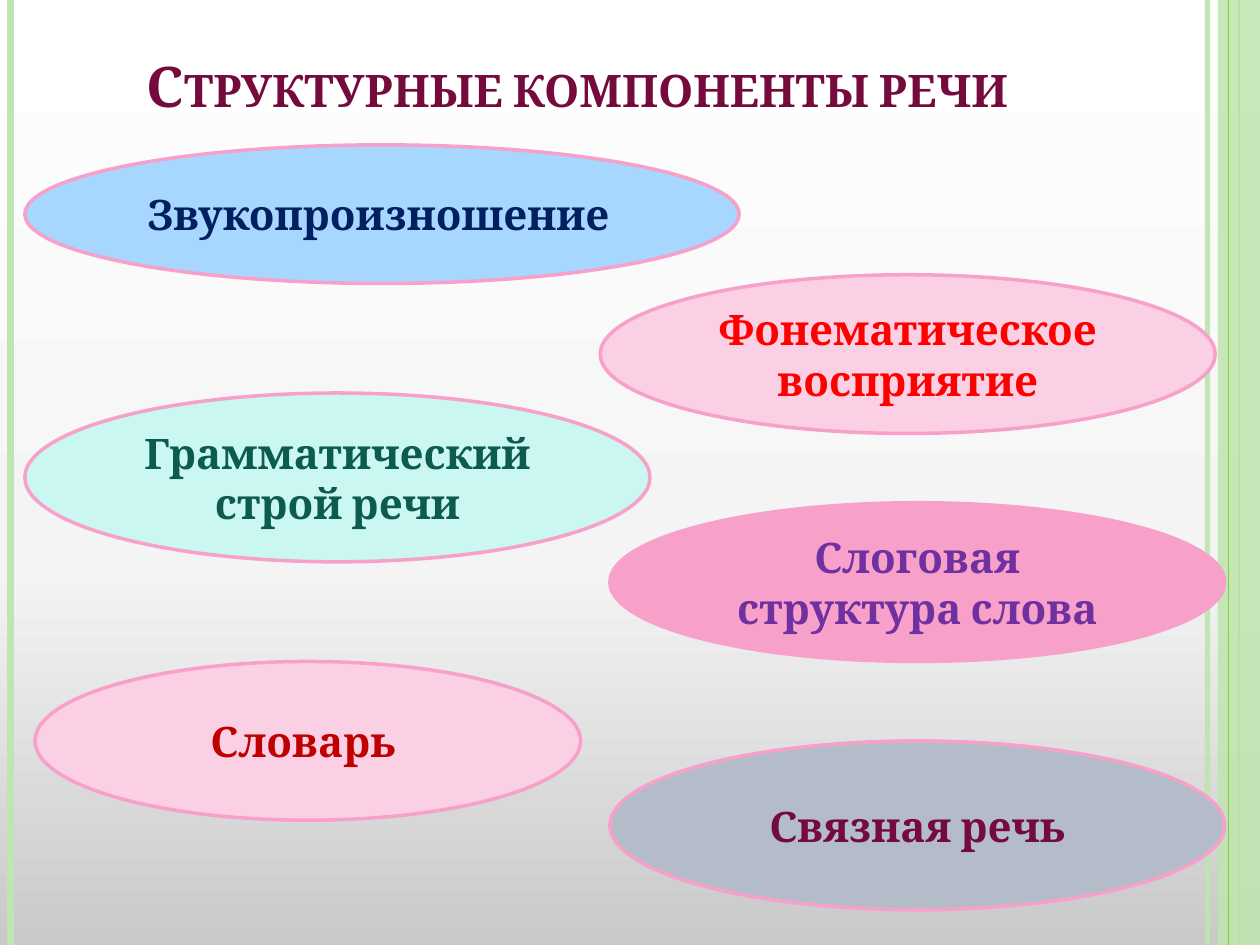
from copy import deepcopy
from dataclasses import dataclass

from lxml import etree
from pptx import Presentation
from pptx.dml.color import RGBColor
from pptx.enum import shapes, text
from pptx.oxml import ns
from pptx.util import Pt

WIDTH, HEIGHT = 720, 540
FONT = "Cambria"
COLOURS = {
    "grey": "C9C9C9", "silver": "F4F4F4", "white": "FFFFFF",
    "pale green": "C0E5AF", "green": "7FD13B",
    "plum": "750B3D", "pink": "F7A1CA", "pale pink": "FBD0E4",
    "sky": "A7D6FF", "navy": "002060", "mint": "CAF7F1", "teal": "0D5A4F",
    "dark red": "C00000", "red": "FF0000", "purple": "7030A0", "slate": "B4BCCA",
}


@dataclass
class Stripe:
    x: float
    weight: float
    colour: str
    opacity: int = 100


@dataclass
class Component:
    spans: list[tuple[str, float]]
    left: float
    top: float
    width: float
    height: float
    fill: str
    ink: str


# Stripes behind and in front of the right-hand band
BACK_STRIPES = [
    Stripe(690, 3, "pale green", 93),
    Stripe(6, 4.5, "pale green"),
    Stripe(708, 1.5, "green"),
]
FRONT_STRIPE = Stripe(702, 0.75, "green")

COMPONENTS = [
    Component([("Звукопроизношение", 24), (" ", 18)], 14.2, 82.8, 408.2, 79.2, "sky", "navy"),
    Component([("Грамматический строй речи", 24)], 14.2, 224.6, 357.2, 96.5, "mint", "teal"),
    Component([("Словарь ", 24)], 20, 378, 311.8, 90.7, "pale pink", "dark red"),
    Component([("Фонематическое восприятие", 24)], 343, 157, 351.4, 90.7, "pale pink", "red"),
    Component([("Слоговая структура слова", 24)], 348.5, 287.3, 351.4, 90.7, "pink", "purple"),
    Component([("Связная речь", 24)], 348.5, 423.4, 351.4, 96.5, "slate", "plum"),
]


def rgb(name: str) -> RGBColor:
    return RGBColor.from_string(COLOURS[name])


def set_opacity(shape, percent: int) -> None:
    colour = shape._element.spPr.find(".//" + ns.qn("a:srgbClr"))
    etree.SubElement(colour, ns.qn("a:alpha")).set("val", str(percent * 1000))


def paint_background(page) -> None:
    fill = page.background.fill
    fill.gradient()
    fill.gradient_angle = 90
    stop_list = page._element.find(".//" + ns.qn("a:gsLst"))
    stop_list.append(deepcopy(stop_list[-1]))
    stops = [("grey", 0), ("silver", 0.4), ("white", 1)]
    for stop, (colour, position) in zip(fill.gradient_stops, stops):
        stop.color.rgb = rgb(colour)
        stop.position = position


def add_stripe(page, stripe: Stripe) -> None:
    line = page.shapes.add_connector(
        shapes.MSO_CONNECTOR.STRAIGHT, Pt(stripe.x), Pt(0), Pt(stripe.x), Pt(HEIGHT))
    line.line.color.rgb = rgb(stripe.colour)
    line.line.width = Pt(stripe.weight)
    if stripe.opacity < 100:
        set_opacity(line, stripe.opacity)
    etree.SubElement(line._element.spPr, ns.qn("a:effectLst"))


def add_band(page) -> None:
    band = page.shapes.add_shape(
        shapes.MSO_SHAPE.RECTANGLE, Pt(696), Pt(0), Pt(24), Pt(HEIGHT))
    band.shadow.inherit = False
    band.fill.solid()
    band.fill.fore_color.rgb = rgb("pale green")
    set_opacity(band, 87)
    band.line.fill.background()


def add_span(para, words: str, size: float, ink: str):
    span = para.add_run()
    span.text = words
    span.font.name = FONT
    span.font.size = Pt(size)
    span.font.bold = True
    span.font.color.rgb = rgb(ink)
    return span


def place_title(page) -> None:
    title = page.shapes.title
    title.left, title.top, title.width, title.height = Pt(36), Pt(21.6), Pt(588), Pt(49.7)
    title.text_frame.auto_size = text.MSO_AUTO_SIZE.NONE
    title.text_frame.vertical_anchor = text.MSO_ANCHOR.BOTTOM
    para = title.text_frame.paragraphs[0]
    para.alignment = text.PP_ALIGN.CENTER
    span = add_span(para, "Структурные компоненты речи", 32, "plum")
    span.font._element.set("cap", "small")


def add_component(page, part: Component) -> None:
    oval = page.shapes.add_shape(
        shapes.MSO_SHAPE.OVAL, Pt(part.left), Pt(part.top), Pt(part.width), Pt(part.height))
    oval.shadow.inherit = False
    oval.fill.solid()
    oval.fill.fore_color.rgb = rgb(part.fill)
    oval.line.color.rgb = rgb("pink")
    oval.line.width = Pt(2)
    oval.text_frame.word_wrap = True
    oval.text_frame.vertical_anchor = text.MSO_ANCHOR.MIDDLE
    para = oval.text_frame.paragraphs[0]
    para.alignment = text.PP_ALIGN.CENTER
    for words, size in part.spans:
        add_span(para, words, size, part.ink)


def main() -> None:
    deck = Presentation()
    deck.slide_width, deck.slide_height = Pt(WIDTH), Pt(HEIGHT)
    page = deck.slides.add_slide(deck.slide_layouts.get_by_name("Title Only"))

    # Backdrop
    paint_background(page)
    for stripe in BACK_STRIPES:
        add_stripe(page, stripe)
    add_band(page)
    add_stripe(page, FRONT_STRIPE)

    # Title and speech components
    place_title(page)
    for part in COMPONENTS:
        add_component(page, part)

    deck.save("out.pptx")


if __name__ == "__main__":
    main()
